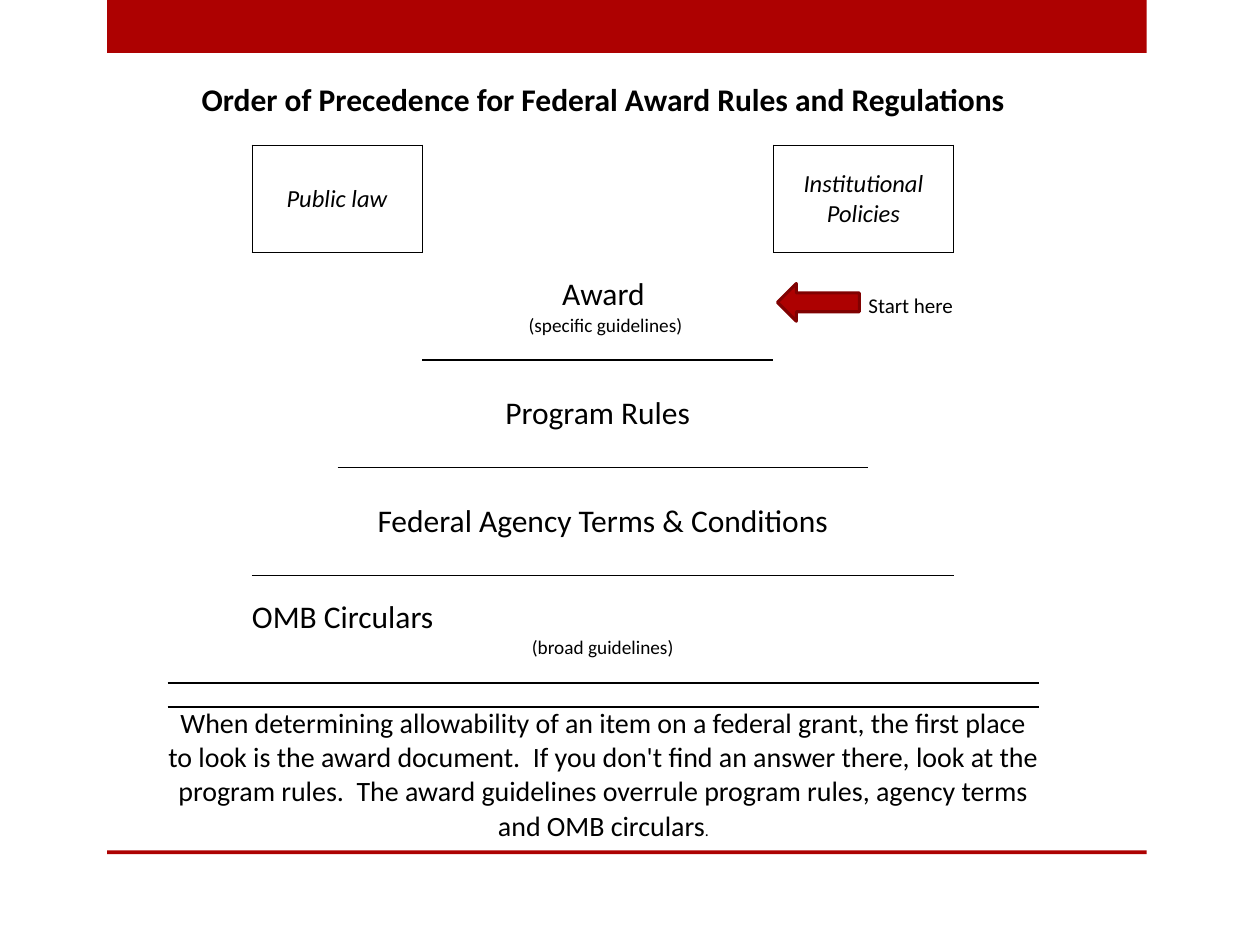
from dataclasses import dataclass
from lxml.etree import SubElement
from pptx import Presentation
from pptx.dml.color import RGBColor
from pptx.enum.shapes import MSO_SHAPE as Preset
from pptx.enum.text import MSO_ANCHOR as Anchor, PP_ALIGN as Align
from pptx.oxml.ns import qn
from pptx.util import Inches, Pt


@dataclass(frozen=True)
class Theme:
    font: str = "Calibri"
    red: str = "AD0101"
    dark_red: str = "800101"
    ink: str = "000000"
    heading: float = 18
    body: float = 16
    box: float = 14
    label: float = 12
    small: float = 11
    stop: float = 9
    empty: float = 8
    plain_table: str = "{2D5ABB26-0587-4C30-8999-92F81FD0307C}"


class SlideBuilder:
    def __init__(self, slide, theme):
        self.slide = slide
        self.theme = theme

    def shape(self, preset, bounds, fill, outline=None, weight=0):
        block = self.slide.shapes.add_shape(preset, *map(Inches, bounds))
        block.shadow.inherit = False
        block.fill.solid()
        block.fill.fore_color.rgb = RGBColor.from_string(fill)
        if outline:
            block.line.color.rgb = RGBColor.from_string(outline)
            block.line.width = Pt(weight)
        else:
            block.line.fill.background()

    def table(self, left, top, widths, heights):
        frame = self.slide.shapes.add_table(
            len(heights), len(widths), Inches(left), Inches(top),
            Inches(sum(widths)), Inches(sum(heights)))
        grid = frame.table
        grid.first_row = grid.horz_banding = False
        grid._tbl.tblPr.find(qn("a:tableStyleId")).text = self.theme.plain_table
        for column, width in zip(grid.columns, widths):
            column.width = Inches(width)
        for row, height in zip(grid.rows, heights):
            row.height = Inches(height)
        return grid

    def border(self, cell, side, weight):
        edge = SubElement(cell._tc.get_or_add_tcPr(), qn(f"a:ln{side}"), w=str(Pt(weight)))
        ink = SubElement(edge, qn("a:solidFill"))
        SubElement(ink, qn("a:srgbClr"), val=self.theme.ink)

    def box(self, grid, row, first, last):
        for column in range(first, last + 1):
            sides = {"L": column == first, "R": column == last, "T": True, "B": True}
            for side, drawn in sides.items():
                if drawn:
                    self.border(grid.cell(row, column), side, 0.5)

    def step(self, grid, row, first, last, weight):
        for column in range(first, last + 1):
            self.border(grid.cell(row, column), "B", weight)
            self.border(grid.cell(row + 1, column), "T", weight)

    def clear(self, grid):
        for cell in grid.iter_cells():
            cell.margin_left = cell.margin_right = cell.margin_top = cell.margin_bottom = 0
            cell.fill.background()
            if not cell.text:
                SubElement(cell.text_frame.paragraphs[0]._p, qn("a:endParaRPr"),
                           sz=str(int(self.theme.empty * 100)))

    def entry(self, grid, row, first, last, lines, anchor=Anchor.MIDDLE, **style):
        cell = grid.cell(row, first)
        if last > first:
            cell.merge(grid.cell(row, last))
        cell.vertical_anchor = anchor
        for index, (align, runs) in enumerate(lines):
            text = cell.text_frame
            paragraph = text.add_paragraph() if index else text.paragraphs[0]
            paragraph.alignment = align
            for words, size in runs:
                run = paragraph.add_run()
                run.text = words
                run.font.color.rgb = RGBColor.from_string(self.theme.ink)
                formats = {"name": self.theme.font, "size": Pt(size),
                           "bold": False, "italic": False, **style}
                for attribute, value in formats.items():
                    setattr(run.font, attribute, value)


def main():
    """Build the order of precedence slide and save it."""
    deck = Presentation()
    deck.slide_width, deck.slide_height = Inches(10), Inches(7.5)
    theme = Theme()
    page = SlideBuilder(deck.slides.add_slide(deck.slide_layouts[6]), theme)

    for top, height in ((0, 0.42), (6.75, 0.03)):
        page.shape(Preset.RECTANGLE, (0.85, top, 8.25, height), theme.red)

    widths = [0.67, 0.68, 0.67, 0.77, 0.67, 0.67, 0.68, 0.75, 0.68, 0.68]
    heights = [0.7, 0.2] + [4.27 / 5] * 5 + [0.19, 1.07]
    pyramid = page.table(1.33, 0.25, widths, heights)

    for first in (1, 7):
        page.box(pyramid, 2, first, first + 1)
    for level, weight in enumerate((1, 1, 1, 1.5)):
        page.step(pyramid, 3 + level, 3 - level, 6 + level, weight)

    centre = Align.CENTER
    advice = (
        "When determining allowability of an item on a federal grant, the first place "
        "to look is the award document.  If you don't find an answer there, look at the "
        "program rules.  The award guidelines overrule program rules, agency terms "
        "and OMB circulars")
    page.entry(pyramid, 0, 0, 9, [(centre, [
        ("Order of Precedence for Federal Award Rules and Regulations", theme.heading)])],
        Anchor.BOTTOM, bold=True)
    for first, source in ((1, "Public law"), (7, "Institutional Policies")):
        page.entry(pyramid, 2, first, first + 1, [(centre, [(source, theme.box)])], italic=True)
    page.entry(pyramid, 3, 4, 5, [
        (centre, [("Award", theme.heading)]),
        (centre, [(" (specific guidelines)", theme.small)])])
    page.entry(pyramid, 3, 8, 8, [(centre, [("Start here", theme.label)])])
    page.entry(pyramid, 4, 3, 6, [(centre, [("Program Rules", theme.heading)])])
    page.entry(pyramid, 5, 2, 7, [
        (centre, [("Federal Agency Terms & Conditions", theme.heading)])])
    page.entry(pyramid, 6, 1, 8, [
        (Align.LEFT, [("OMB Circulars", theme.heading)]),
        (centre, [("(broad guidelines)", theme.small)])])
    page.entry(pyramid, 8, 0, 9, [
        (centre, [(advice, theme.body), (".", theme.stop)])], Anchor.BOTTOM)
    page.clear(pyramid)

    page.shape(Preset.LEFT_ARROW, (6.17, 2.25, 0.65, 0.3), theme.red, theme.dark_red, 1.75)
    deck.save("out.pptx")


if __name__ == "__main__":
    main()
